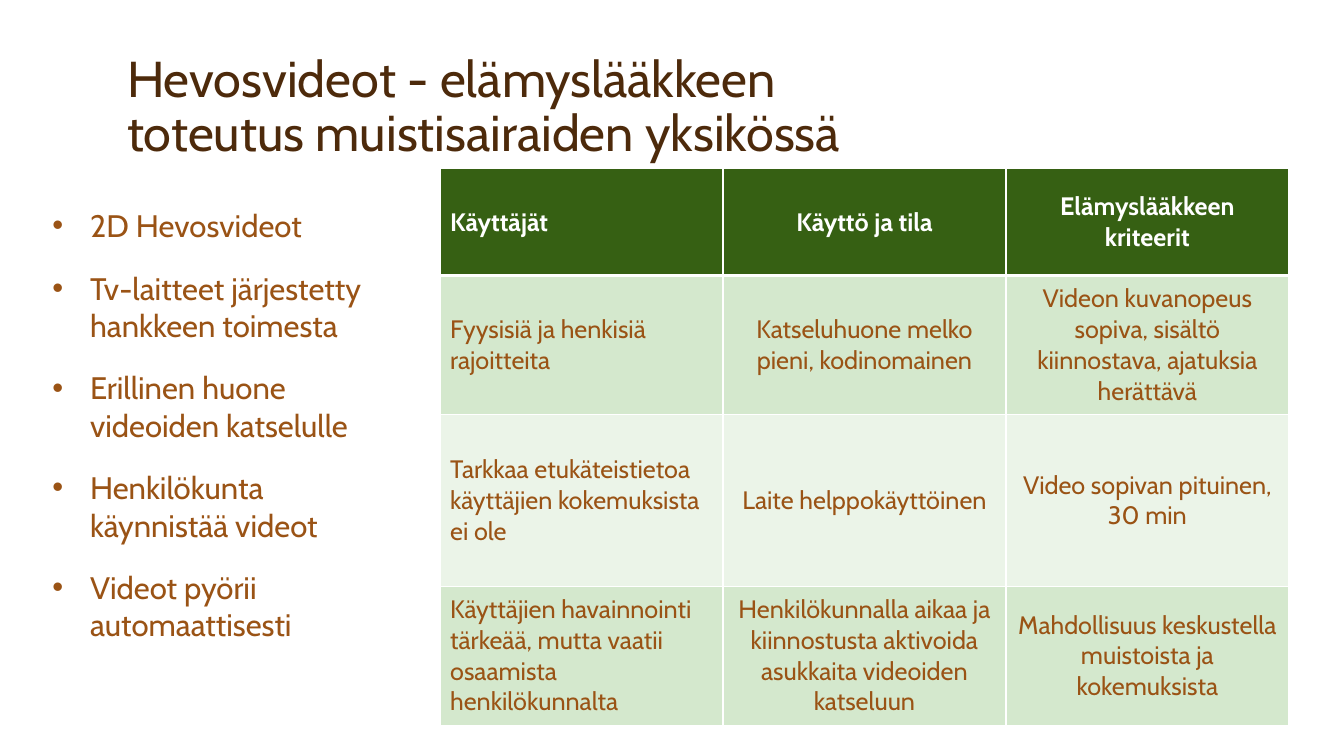
from lxml.etree import SubElement
from pptx import Presentation
from pptx.dml.color import RGBColor
from pptx.enum.text import MSO_ANCHOR as Anchor, MSO_AUTO_SIZE as AutoSize, PP_ALIGN as Align
from pptx.oxml.ns import qn
from pptx.util import Cm, Pt

FONT = "Cabin"
TITLE, BODY, WHITE = "4D2A0B", "9A5315", "FFFFFF"
HEADER_FILL, BANDS = "366013", ("EBF4E8", "D4E8CD")

TITLE_LINES = ["Hevosvideot - elämyslääkkeen", "toteutus muistisairaiden yksikössä"]
BULLETS = [
    "2D Hevosvideot",
    "Tv-laitteet järjestetty hankkeen toimesta",
    "Erillinen huone videoiden katselulle",
    "Henkilökunta käynnistää videot",
    "Videot pyörii automaattisesti",
]
ROWS = [
    ("Käyttäjät", "Käyttö ja tila", "Elämyslääkkeen kriteerit"),
    ("Fyysisiä ja henkisiä rajoitteita",
     "Katseluhuone melko pieni, kodinomainen",
     "Videon kuvanopeus sopiva, sisältö kiinnostava, ajatuksia herättävä"),
    ("Tarkkaa etukäteistietoa käyttäjien kokemuksista ei ole",
     "Laite helppokäyttöinen",
     "Video sopivan pituinen, 30 min"),
    ("Käyttäjien havainnointi tärkeää, mutta vaatii osaamista henkilökunnalta",
     "Henkilökunnalla aikaa ja kiinnostusta aktivoida asukkaita videoiden katseluun",
     "Mahdollisuus keskustella muistoista ja kokemuksista"),
]
COLUMN_WIDTH = 7.13
ROW_HEIGHTS = (2.69, 3.51, 4.32, 3.51)


def rgb(value):
    return RGBColor.from_string(value)


def add_run(p, text, size, color, bold=False):
    r = p.add_run()
    r.text = text
    r.font.name = FONT
    r.font.size = Pt(size)
    r.font.bold = bold
    r.font.color.rgb = rgb(color)


def set_title(s, lines, left, top, width, height):
    sp = s.shapes.title
    sp.left, sp.top, sp.width, sp.height = Cm(left), Cm(top), Cm(width), Cm(height)
    tf = sp.text_frame
    tf.word_wrap = True
    tf.auto_size = AutoSize.NONE
    tf.vertical_anchor = Anchor.BOTTOM
    p = tf.paragraphs[0]
    p.alignment = Align.LEFT
    p.line_spacing = 0.9
    for i, line in enumerate(lines):
        if i:
            p.add_line_break()
        add_run(p, line, 36, TITLE)


def add_bullets(s, items, left, top, width, height):
    tf = s.shapes.add_textbox(Cm(left), Cm(top), Cm(width), Cm(height)).text_frame
    tf.word_wrap = True
    for i, item in enumerate(items):
        p = tf.add_paragraph() if i else tf.paragraphs[0]
        p.space_before = Pt(18 if i else 0)
        pPr = p._p.get_or_add_pPr()
        pPr.set("marL", str(Cm(0.95)))
        pPr.set("indent", str(-Cm(0.95)))
        SubElement(pPr, qn("a:buFont"), typeface="Arial")
        SubElement(pPr, qn("a:buChar"), char="•")
        add_run(p, item, 22.2, BODY)


def set_borders(cell, bottom):
    tcPr = cell._tc.get_or_add_tcPr()
    for side, width in (("lnL", 1), ("lnR", 1), ("lnT", 1), ("lnB", bottom)):
        ln = SubElement(tcPr, qn("a:" + side), w=str(Pt(width)))
        fill = SubElement(ln, qn("a:solidFill"))
        SubElement(fill, qn("a:srgbClr"), val=WHITE)


def fill_cell(cell, text, row, col):
    header = row == 0
    # Borders come before the fill in the cell properties
    set_borders(cell, 3 if header else 1)
    cell.fill.solid()
    cell.fill.fore_color.rgb = rgb(HEADER_FILL if header else BANDS[row % 2])
    cell.vertical_anchor = Anchor.MIDDLE
    p = cell.text_frame.paragraphs[0]
    p.alignment = Align.CENTER if col else Align.LEFT
    add_run(p, text, 18, WHITE if header else BODY, header)


def add_grid(s, rows, left, top):
    count = len(rows[0])
    table = s.shapes.add_table(len(rows), count, Cm(left), Cm(top),
                               Cm(COLUMN_WIDTH * count), Cm(sum(ROW_HEIGHTS))).table
    for column in table.columns:
        column.width = Cm(COLUMN_WIDTH)
    for i, (texts, height) in enumerate(zip(rows, ROW_HEIGHTS)):
        table.rows[i].height = Cm(height)
        for j, text in enumerate(texts):
            fill_cell(table.cell(i, j), text, i, j)


def main():
    prs = Presentation()
    prs.slide_width, prs.slide_height = Cm(33.87), Cm(19.05)
    s = prs.slides.add_slide(prs.slide_layouts[5])

    # Heading
    set_title(s, TITLE_LINES, 2.95, 0.84, 27.94, 3.38)
    # Left column
    add_bullets(s, BULLETS, 1.07, 5.08, 9.42, 12.14)
    # Table of users, use and criteria
    add_grid(s, ROWS, 11.09, 4.25)

    prs.save("out.pptx")


if __name__ == "__main__":
    main()
